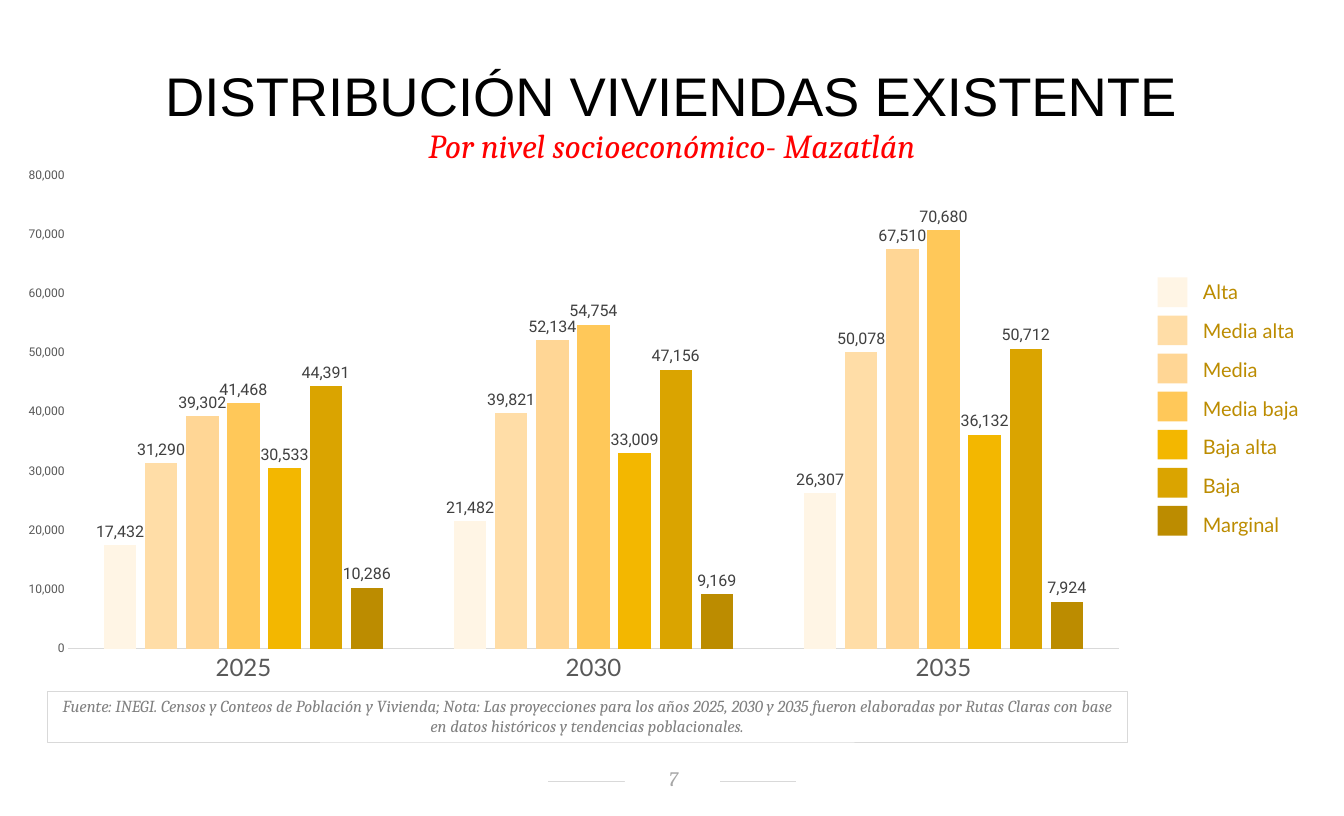
from dataclasses import dataclass

from lxml import etree
from pptx import Presentation
from pptx.chart.data import CategoryChartData
from pptx.dml.color import RGBColor
from pptx.enum.chart import XL_LABEL_POSITION, XL_TICK_MARK
from pptx.enum.chart import XL_CHART_TYPE
from pptx.enum.shapes import MSO_CONNECTOR, MSO_SHAPE
from pptx.enum.text import MSO_ANCHOR, MSO_AUTO_SIZE, PP_ALIGN
from pptx.oxml import parse_xml
from pptx.oxml.ns import nsdecls, qn
from pptx.util import Inches, Pt

CENTER, LEFT = PP_ALIGN.CENTER, PP_ALIGN.LEFT
TOP, MIDDLE = MSO_ANCHOR.TOP, MSO_ANCHOR.MIDDLE
GROW, FIXED = MSO_AUTO_SIZE.SHAPE_TO_FIT_TEXT, MSO_AUTO_SIZE.NONE
NO_TICK = XL_TICK_MARK.NONE
RULE_GRAY, AXIS_GRAY, LABEL_GRAY = "D9D9D9", "595959", "404040"
THOUSANDS = "#,##0"
YEARS = ("2025", "2030", "2035")


@dataclass(frozen=True)
class Level:
    name: str
    color: str
    homes: tuple[int, ...]


LEVELS = (
    Level("Alta", "FFF5E5", (17432, 21482, 26307)),
    Level("Media alta", "FFDDA7", (31290, 39821, 50078)),
    Level("Media", "FFD695", (39302, 52134, 67510)),
    Level("Media baja", "FFC859", (41468, 54754, 70680)),
    Level("Baja alta", "F3B700", (30533, 33009, 36132)),
    Level("Baja", "DAA400", (44391, 47156, 50712)),
    Level("Marginal", "BC8C00", (10286, 9169, 7924)),
)


def rgb(color: str) -> RGBColor:
    return RGBColor.from_string(color)


def box(left: float, top: float, width: float, height: float) -> tuple:
    return Inches(left), Inches(top), Inches(width), Inches(height)


def set_font(font, size: float, face: str, color: str, italic: bool = False) -> None:
    font.size, font.name, font.italic = Pt(size), face, italic
    font.color.rgb = rgb(color)


def write(frame, text: str, *, size: float, face: str, color: str,
          italic: bool = False, align=CENTER, spacing: float | None = None) -> None:
    paragraph = frame.paragraphs[0]
    paragraph.alignment = align
    paragraph.line_spacing = spacing
    run = paragraph.add_run()
    run.text = text
    set_font(run.font, size, face, color, italic)


def set_frame(frame, anchor=TOP, fit=FIXED,
              insets: tuple[float, ...] = (0.1, 0.05, 0.1, 0.05)) -> None:
    frame.word_wrap, frame.auto_size, frame.vertical_anchor = True, fit, anchor
    (frame.margin_left, frame.margin_top,
     frame.margin_right, frame.margin_bottom) = map(Inches, insets)


def add_rectangle(slide, bounds: tuple, fill: str | None = None, line: str | None = None):
    rectangle = slide.shapes.add_shape(MSO_SHAPE.RECTANGLE, *bounds)
    rectangle.shadow.inherit = False
    if fill:
        rectangle.fill.solid()
        rectangle.fill.fore_color.rgb = rgb(fill)
    else:
        rectangle.fill.background()
    if line:
        rectangle.line.color.rgb = rgb(line)
        rectangle.line.width = Pt(0.75)
    else:
        rectangle.line.fill.background()
    return rectangle


def add_page_number(slide) -> None:
    rule = slide.shapes.add_connector(
        MSO_CONNECTOR.STRAIGHT, Inches(5.71), Inches(8.14), Inches(8.29), Inches(8.14))
    rule.line.color.rgb = rgb(RULE_GRAY)
    rule.line.width = Pt(0.75)
    etree.SubElement(rule._element.spPr, qn("a:effectLst"))
    number = add_rectangle(slide, box(6.51, 7.98, 0.99, 0.29), fill="FFFFFF")
    set_frame(number.text_frame, MIDDLE, insets=(0.11, 0.02, 0.09, 0.05))
    write(number.text_frame, "7", size=15.4, face="Cambria", color="A6A6A6", italic=True)


def add_headings(slide) -> None:
    title = slide.shapes.title
    title.left, title.top, title.width, title.height = box(0.49, 0.77, 13.01, 0.6)
    set_frame(title.text_frame, insets=(0.12, 0.06, 0.12, 0.06))
    write(title.text_frame, "DISTRIBUCIÓN VIVIENDAS EXISTENTE",
          size=40.8, face="Arial", color="000000", spacing=0.7)
    subtitle = slide.shapes.add_textbox(*box(-0.35, 1.25, 14.7, 0.53))
    set_frame(subtitle.text_frame, fit=GROW)
    write(subtitle.text_frame, "Por nivel socioeconómico- Mazatlán",
          size=25.2, face="Cambria", color="FF0000", italic=True)
    subtitle.text_frame.paragraphs[0].space_after = Pt(4.2)


def add_source_note(slide) -> None:
    note = add_rectangle(slide, box(0.49, 7.2, 11.25, 0.53), line=RULE_GRAY)
    set_frame(note.text_frame, fit=GROW)
    write(note.text_frame,
          "Fuente: INEGI. Censos y Conteos de Población y Vivienda; Nota: Las proyecciones "
          "para los años 2025, 2030 y 2035 fueron elaboradas por Rutas Claras con base "
          "en datos históricos y tendencias poblacionales.",
          size=12.6, face="Cambria", color="808080", italic=True)


def add_legend(slide) -> None:
    names = slide.shapes.add_table(len(LEVELS), 1, *box(12.53, 2.84, 1.4, 2.83)).table
    names.first_row = names.horz_banding = False
    for row, level in enumerate(LEVELS):
        cell = names.cell(row, 0)
        cell.fill.background()
        cell.vertical_anchor = MIDDLE
        cell.margin_left = cell.margin_right = cell.margin_top = cell.margin_bottom = 0
        write(cell.text_frame, level.name, size=15, face="Lato", color="BC8C00", align=LEFT)
        add_rectangle(slide, box(12.06, 2.89 + row * 2.38 / 6, 0.31, 0.31), fill=level.color)


def set_plot_area(chart, x: float, y: float, w: float, h: float) -> None:
    """Fix the inner plot area as fractions of the chart."""
    plot_area = chart._chartSpace.chart.plotArea
    for layout in plot_area.findall(qn("c:layout")):
        plot_area.remove(layout)
    sizes = "".join(f'<c:{key} val="{value}"/>'
                    for key, value in (("x", x), ("y", y), ("w", w), ("h", h)))
    plot_area.insert(0, parse_xml(
        f'<c:layout {nsdecls("c")}><c:manualLayout><c:layoutTarget val="inner"/>'
        f'<c:xMode val="edge"/><c:yMode val="edge"/>{sizes}</c:manualLayout></c:layout>'))


def add_homes_chart(slide) -> None:
    data = CategoryChartData(number_format=THOUSANDS)
    data.categories = YEARS
    for level in LEVELS:
        data.add_series(level.name, level.homes)
    chart = slide.shapes.add_chart(
        XL_CHART_TYPE.COLUMN_CLUSTERED, *box(0, 1.66, 11.89, 5.54), data).chart
    chart.has_legend = chart.has_title = False
    set_font(chart.font, 9, "Roboto", "000000")
    set_plot_area(chart, 0.06, 0.03, 0.92, 0.89)

    plot = chart.plots[0]
    plot.gap_width, plot.overlap, plot.vary_by_categories = 219, -27, False
    for series, level in zip(plot.series, LEVELS):
        series.format.fill.solid()
        series.format.fill.fore_color.rgb = rgb(level.color)
        series.invert_if_negative = False
        labels = series.data_labels
        labels.show_value = True
        labels.number_format, labels.number_format_is_linked = THOUSANDS, False
        labels.position = XL_LABEL_POSITION.OUTSIDE_END
        set_font(labels.font, 12, "Roboto", LABEL_GRAY)

    years, homes = chart.category_axis, chart.value_axis
    for axis, size, face in ((years, 18, "Lato"), (homes, 9, "Roboto")):
        axis.major_tick_mark = axis.minor_tick_mark = NO_TICK
        axis.has_major_gridlines = False
        set_font(axis.tick_labels.font, size, face, AXIS_GRAY)
    years.format.line.color.rgb = rgb(RULE_GRAY)
    years.format.line.width = Pt(0.75)
    homes.format.line.fill.background()
    homes.minimum_scale, homes.maximum_scale, homes.major_unit = 0, 80000, 10000
    homes.tick_labels.number_format = THOUSANDS
    homes.tick_labels.number_format_is_linked = False


def main() -> None:
    deck = Presentation()
    deck.slide_width, deck.slide_height = Inches(14), Inches(8.5)
    slide = deck.slides.add_slide(deck.slide_layouts[5])
    add_page_number(slide)
    add_source_note(slide)
    add_headings(slide)
    add_legend(slide)
    add_homes_chart(slide)
    deck.save("out.pptx")


if __name__ == "__main__":
    main()
